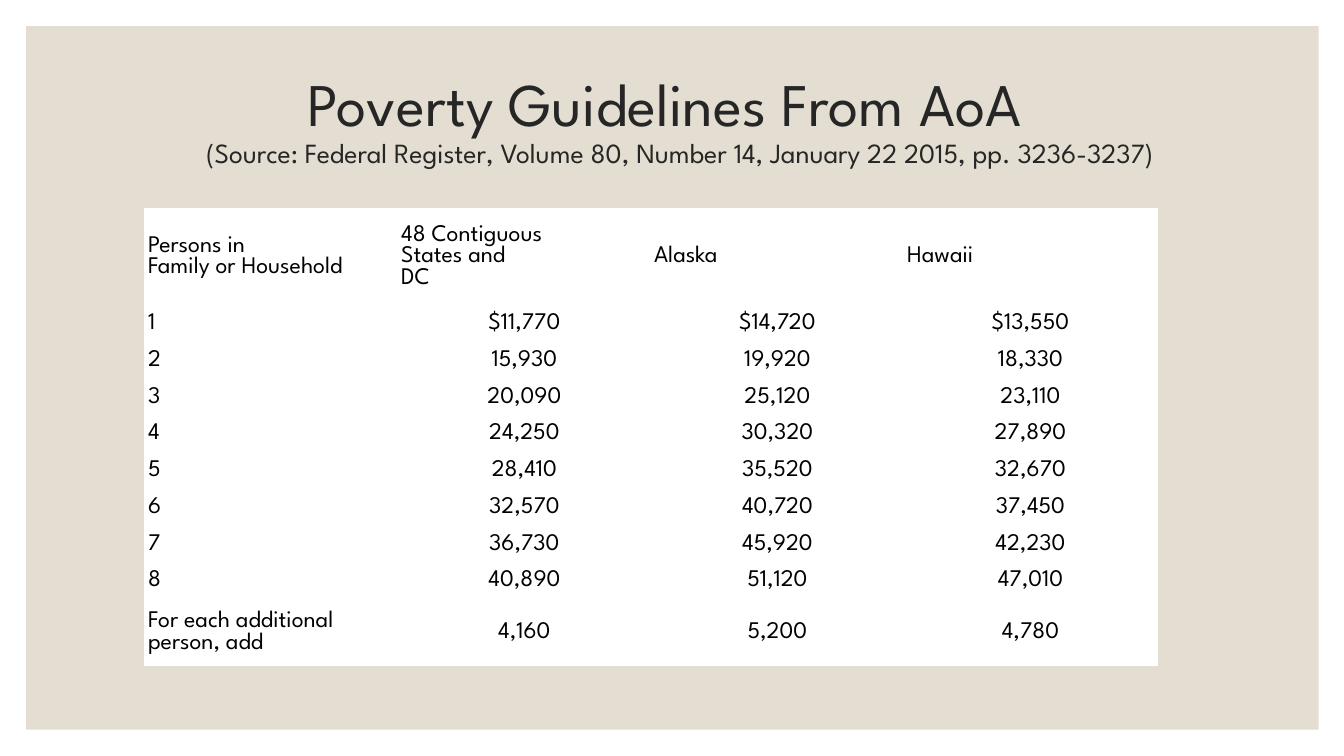
from pptx import Presentation
from pptx.dml.color import RGBColor
from pptx.enum.shapes import MSO_SHAPE
from pptx.enum.text import MSO_ANCHOR, MSO_AUTO_SIZE, PP_ALIGN
from pptx.util import Emu, Pt

FONT = "League Spartan"
COLOURS = {"panel": "E3DED1", "title": "262626", "text": "000000", "cell": "FFFFFF"}
HEADINGS = [
    "Persons in\nFamily or Household",
    "48 Contiguous\u00a0\nStates and\u00a0\nDC",
    "Alaska",
    "Hawaii",
]
GUIDELINES = [
    ("1", "$11,770", "$14,720", "$13,550"),
    ("2", "15,930", "19,920", "18,330"),
    ("3", "20,090", "25,120", "23,110"),
    ("4", "24,250", "30,320", "27,890"),
    ("5", "28,410", "35,520", "32,670"),
    ("6", "32,570", "40,720", "37,450"),
    ("7", "36,730", "45,920", "42,230"),
    ("8", "40,890", "51,120", "47,010"),
    ("For each additional\u00a0\nperson, add", "4,160", "5,200", "4,780"),
]
COLUMN_WIDTH = 241
ROW_HEIGHTS = [92] + [35] * 8 + [63]


def px(count):
    return Emu(count * 9525)


def colour(name):
    return RGBColor.from_string(COLOURS[name])


def write(para, text, size, fill="text", align=None, spacing=None):
    para.alignment = align
    para.line_spacing = spacing
    for index, line in enumerate(text.split("\n")):
        if index:
            para.add_line_break()
        span = para.add_run()
        span.text = line
        span.font.name = FONT
        span.font.size = Pt(size)
        span.font.color.rgb = colour(fill)


def add_panel(page):
    panel = page.shapes.add_shape(MSO_SHAPE.RECTANGLE, px(25), px(25), px(1231), px(670))
    panel.shadow.inherit = False
    panel.fill.solid()
    panel.fill.fore_color.rgb = colour("panel")
    panel.line.fill.background()
    panel.element.getparent().insert(2, panel.element)


def add_title(page):
    title = page.shapes.title
    title.left, title.top, title.width, title.height = px(47), px(67), px(1201), px(99)
    frame = title.text_frame
    frame.word_wrap = True
    frame.auto_size = MSO_AUTO_SIZE.NONE
    frame.vertical_anchor = MSO_ANCHOR.MIDDLE
    para = frame.paragraphs[0]
    centred = {"fill": "title", "align": PP_ALIGN.CENTER, "spacing": 0.9}
    write(para, "Poverty Guidelines From AoA  ", 43.2, **centred)
    para.add_line_break()
    write(
        para,
        "(Source: Federal Register, Volume 80, Number 14, January 22 2015, pp. 3236-3237)",
        19.8,
        **centred,
    )


def fill_cell(cell, text, align):
    cell.fill.solid()
    cell.fill.fore_color.rgb = colour("cell")
    cell.vertical_anchor = MSO_ANCHOR.MIDDLE
    cell.margin_left = cell.margin_right = px(3)
    cell.margin_top = cell.margin_bottom = px(3)
    write(cell.text_frame.paragraphs[0], text, 17, align=align)


def add_guidelines(page):
    rows = [HEADINGS, *GUIDELINES]
    columns = len(HEADINGS)
    table = page.shapes.add_table(
        len(rows), columns, px(138), px(199), px(COLUMN_WIDTH * columns), px(sum(ROW_HEIGHTS))
    ).table
    table.first_row = False
    table.horz_banding = False
    for column in table.columns:
        column.width = px(COLUMN_WIDTH)
    for row_index, (texts, height) in enumerate(zip(rows, ROW_HEIGHTS)):
        table.rows[row_index].height = px(height)
        for column_index, text in enumerate(texts):
            is_amount = row_index > 0 and column_index > 0
            align = PP_ALIGN.CENTER if is_amount else PP_ALIGN.LEFT
            fill_cell(table.cell(row_index, column_index), text, align)


def main():
    deck = Presentation()
    deck.slide_width, deck.slide_height = px(1280), px(720)
    page = deck.slides.add_slide(deck.slide_layouts[5])
    add_panel(page)
    add_title(page)
    add_guidelines(page)
    deck.save("out.pptx")


if __name__ == "__main__":
    main()
